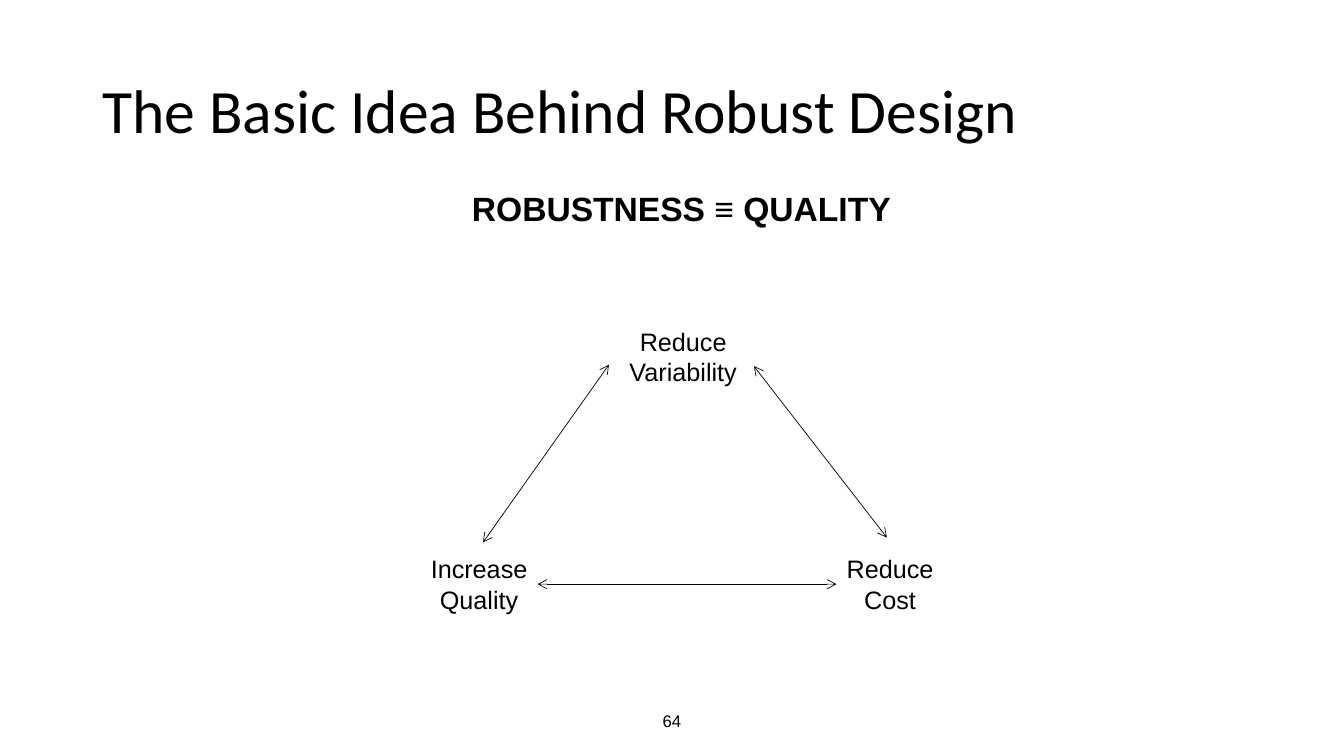
import pptx
import pptx.util
import pptx.dml.color
import pptx.enum.text
import pptx.enum.shapes
import pptx.oxml.ns
import lxml.etree

Pt = pptx.util.Pt
ALIGN = pptx.enum.text.PP_ALIGN
FIT = pptx.enum.text.MSO_AUTO_SIZE
MIDDLE = pptx.enum.text.MSO_ANCHOR.MIDDLE
TOP = pptx.enum.text.MSO_ANCHOR.TOP
BLACK = pptx.dml.color.RGBColor(0, 0, 0)

TITLE = "The Basic Idea Behind Robust Design"
TITLE_BOX = (66, 29, 828, 104)
GOAL_TEXT = {"name": "Arial", "size": Pt(18)}
GROW = {"word_wrap": False, "auto_size": FIT.SHAPE_TO_FIT_TEXT, "vertical_anchor": TOP}
FIXED = {"word_wrap": True, "auto_size": FIT.NONE, "vertical_anchor": MIDDLE}

LABELS = [
    ("number", ["64"], (318, 500.4, 324, 28.8), {"name": "Arial", "size": Pt(12)}, FIXED, ALIGN.CENTER),
    ("vary", ["Reduce", "Variability"], (442, 229.5, 92, 50.5), GOAL_TEXT, GROW, ALIGN.CENTER),
    ("cost", ["Reduce", "Cost"], (597.5, 392, 76.5, 50.5), GOAL_TEXT, GROW, ALIGN.CENTER),
    ("quality", ["Increase", "Quality"], (300.5, 392, 83.5, 50.5), GOAL_TEXT, GROW, ALIGN.CENTER),
    ("motto", ["ROBUSTNESS ≡ QUALITY"], (330, 130.5, 315.5, 36),
     {"name": "Arial", "size": Pt(24), "bold": True}, GROW, ALIGN.LEFT),
]
ARROWS = [
    ((435, 260.5), (345, 387.5), None),
    ((597.5, 418), (384, 418), (("cost", 1), ("quality", 3))),
    ((633.5, 384), (538.5, 261.5), None),
]


def apply(item, style):
    for key, value in style.items():
        setattr(item, key, value)


def write(shape, lines, font, frame, align):
    text = shape.text_frame
    apply(text, frame)
    text.text = "\n".join(lines)
    for para in text.paragraphs:
        para.alignment = align
        for run in para.runs:
            apply(run.font, font)
            run.font.color.rgb = BLACK


def draw(slide, start, end, joins, boxes):
    kind = pptx.enum.shapes.MSO_CONNECTOR.STRAIGHT
    arrow = slide.shapes.add_connector(kind, *map(Pt, start + end))
    if joins:
        (first, out), (last, into) = joins
        arrow.begin_connect(boxes[first], out)
        arrow.end_connect(boxes[last], into)
    arrow.line.color.rgb = BLACK
    arrow.line.width = Pt(0.5)
    props = arrow._element.spPr
    line = props.find(pptx.oxml.ns.qn("a:ln"))
    for tag in ("a:headEnd", "a:tailEnd"):
        lxml.etree.SubElement(line, pptx.oxml.ns.qn(tag), type="arrow")
    lxml.etree.SubElement(props, pptx.oxml.ns.qn("a:effectLst"))


def main():
    deck = pptx.Presentation()
    apply(deck, {"slide_width": Pt(960), "slide_height": Pt(540)})
    slide = deck.slides.add_slide(deck.slide_layouts[5])
    title = slide.shapes.title
    apply(title, dict(zip(("left", "top", "width", "height"), map(Pt, TITLE_BOX))))
    write(title, [TITLE], {"name": "Calibri", "size": Pt(44)}, FIXED, ALIGN.LEFT)
    title.text_frame.paragraphs[0].line_spacing = 0.9
    boxes = {}
    for name, lines, place, font, frame, align in LABELS:
        boxes[name] = slide.shapes.add_textbox(*map(Pt, place))
        write(boxes[name], lines, font, frame, align)
    for start, end, joins in ARROWS:
        draw(slide, start, end, joins, boxes)
    deck.save("out.pptx")


if __name__ == "__main__":
    main()
